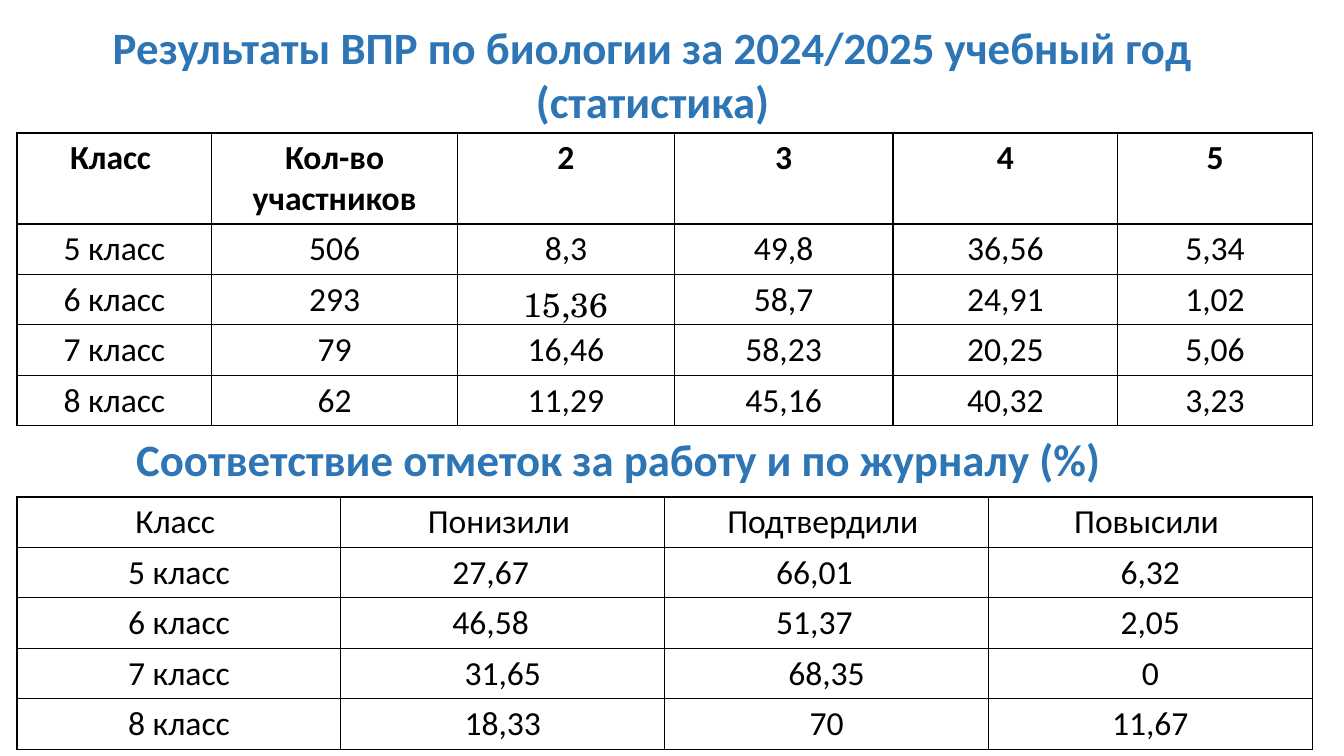
"""Build the slide with the biology test results and their match with school marks."""
from dataclasses import dataclass

from lxml import etree
from pptx import Presentation
from pptx.dml.color import RGBColor
from pptx.enum.text import MSO_ANCHOR, MSO_AUTO_SIZE, PP_ALIGN
from pptx.oxml.ns import qn
from pptx.util import Pt

CENTER = PP_ALIGN.CENTER
TOP = MSO_ANCHOR.TOP
GROW = MSO_AUTO_SIZE.SHAPE_TO_FIT_TEXT
TITLE_ONLY = 5


@dataclass(frozen=True)
class Theme:
    font: str = "Calibri"
    serif: str = "TeX Gyre Schola"
    heading_color: str = "2E75B6"
    text_color: str = "000000"
    border_color: str = "000000"
    heading_size: float = 32
    cell_size: float = 24
    border_width: float = 1


def write_text(text_frame, text, *, font, size, color, bold=False):
    paragraph = text_frame.paragraphs[0]
    paragraph.alignment = CENTER
    paragraph.line_spacing = 1.0
    paragraph.space_before = Pt(0)
    run = paragraph.add_run()
    run.text = text
    run.font.name = font
    run.font.size = Pt(size)
    run.font.bold = bold
    run.font.color.rgb = RGBColor.from_string(color)


class SlideBuilder:
    def __init__(self, slide, theme):
        self.slide = slide
        self.theme = theme

    def format_heading(self, shape, text, left, top, width, height, margin_right=7.2):
        shape.left, shape.top = Pt(left), Pt(top)
        shape.width, shape.height = Pt(width), Pt(height)
        text_frame = shape.text_frame
        text_frame.word_wrap = True
        text_frame.auto_size = GROW
        text_frame.vertical_anchor = TOP
        text_frame.margin_right = Pt(margin_right)
        write_text(text_frame, text, font=self.theme.font, size=self.theme.heading_size,
                   color=self.theme.heading_color, bold=True)

    def title(self, text, *box):
        self.format_heading(self.slide.shapes.title, text, *box)

    def heading(self, text, *box, margin_right):
        shape = self.slide.shapes.add_textbox(0, 0, 0, 0)
        self.format_heading(shape, text, *box, margin_right=margin_right)

    def border(self, cell):
        properties = cell._tc.get_or_add_tcPr()
        for index, side in enumerate(("lnL", "lnR", "lnT", "lnB")):
            line = etree.Element(qn(f"a:{side}"), w=str(Pt(self.theme.border_width)))
            fill = etree.SubElement(line, qn("a:solidFill"))
            etree.SubElement(fill, qn("a:srgbClr"), val=self.theme.border_color)
            properties.insert(index, line)

    def table(self, rows, left, top, widths, heights, *, bold_header=False,
              serif_cells=(), shifted_cells=()):
        frame = self.slide.shapes.add_table(
            len(rows), len(widths), Pt(left), Pt(top), Pt(sum(widths)), Pt(sum(heights)))
        table = frame.table
        table.first_row = table.horz_banding = False
        for column, width in zip(table.columns, widths):
            column.width = Pt(width)
        for row_index, values in enumerate(rows):
            table.rows[row_index].height = Pt(heights[row_index])
            for column_index, value in enumerate(values):
                position = (row_index, column_index)
                cell = table.cell(*position)
                cell.fill.background()
                cell.vertical_anchor = TOP
                if position in shifted_cells:
                    cell.margin_right = Pt(24.5)
                self.border(cell)
                font = self.theme.serif if position in serif_cells else self.theme.font
                write_text(cell.text_frame, value, font=font, size=self.theme.cell_size,
                           color=self.theme.text_color, bold=bold_header and row_index == 0)


RESULTS = [
    ("Класс ", "Кол-во участников", "2", "3", "4", "5"),
    ("5 класс", "506", "8,3", "49,8", "36,56", "5,34"),
    ("6 класс", "293", "15,36", "58,7", "24,91", "1,02"),
    ("7 класс", "79", "16,46", "58,23", "20,25", "5,06"),
    ("8 класс", "62", "11,29", "45,16", "40,32", "3,23"),
]
MARK_MATCH = [
    ("Класс ", "Понизили ", "Подтвердили ", "Повысили "),
    ("5 класс", "27,67", "66,01", "6,32"),
    ("6 класс", "46,58", "51,37", "2,05"),
    ("7 класс", "31,65", "68,35", "0"),
    ("8 класс", "18,33", "70", "11,67"),
]


def main():
    presentation = Presentation()
    presentation.slide_width, presentation.slide_height = Pt(960), Pt(540)
    slide = presentation.slides.add_slide(presentation.slide_layouts[TITLE_ONLY])
    builder = SlideBuilder(slide, Theme())
    builder.title("Результаты ВПР по биологии за 2024/2025 учебный год (статистика)",
                  12.2, 10.8, 908, 85)
    builder.table(RESULTS, 12.2, 95, [139, 175.7, 154.8, 156.2, 160.6, 139],
                  [65] + [36] * 4, bold_header=True, serif_cells={(2, 2)})
    builder.heading("Соответствие отметок за работу и по журналу (%)",
                    51, 304.6, 887, 46, margin_right=112)
    builder.table(MARK_MATCH, 12.2, 355, [231.3] * 4, [36] * 5,
                  shifted_cells={(row, column) for row in (1, 2) for column in (1, 2)})
    presentation.save("out.pptx")


if __name__ == "__main__":
    main()
